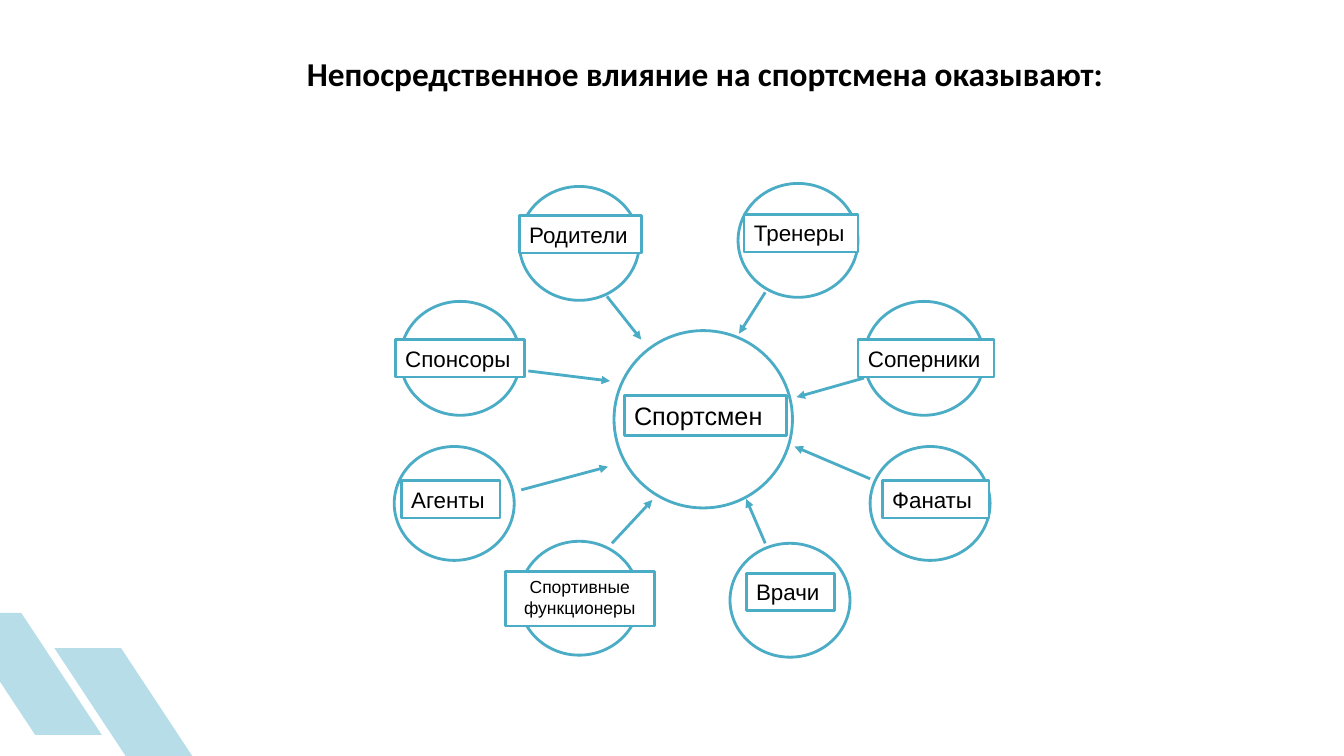
from pptx import Presentation
from pptx import util as u
from pptx.dml.color import RGBColor
from pptx.enum import shapes, text
from pptx.oxml.ns import qn
from lxml import etree
from dataclasses import dataclass


@dataclass(frozen=True)
class Theme:
    ink: str = "000000"
    paper: str = "FFFFFF"
    line: str = "4BACC6"
    deco: str = "B7DEE8"
    head: str = "Calibri"
    body: str = "Arial"
    title: float = 23.8
    hub: float = 18
    label: float = 16
    small: float = 12.5
    stroke: float = 2


T = Theme()
PX = 9144
SIZE = (1333, 750)
TITLE = "Непосредственное влияние на спортсмена оказывают:"
TITLE_BOX = (257, 52, 884, 73)
BARS = [(54, 643), (-45, 608)]
BAR = (146, 121)
SLANT = 0.66
HUB = ("Спортсмен", (609, 328, 177, 176), (619, 392, 161, 40))
RING = (119, 113)
ROW = 37
# name, ring corner, label left/top/width, arrow start and end
PEOPLE = [
    ("Родители", (515, 185), (515, 214, 121), (602, 294, 636, 337)),
    ("Тренеры", (732, 182), (738, 213, 113), (759, 290, 733, 331)),
    ("Спонсоры", (397, 299), (392, 337, 128), (524, 368, 605, 378)),
    ("Соперники", (857, 299), (851, 337, 135), (857, 375, 790, 394)),
    ("Агенты", (391, 443), (398, 477, 98), (517, 486, 603, 463)),
    ("Фанаты", (863, 443), (875, 477, 106), (863, 475, 788, 443)),
    ("Врачи", (724, 539), (740, 569, 88), (759, 539, 740, 495)),
]
STAFF = ("Спортивные функционеры", (515, 537), (501, 567, 148, 54),
         (607, 539, 647, 496))


def emu(nums):
    return [n * PX for n in nums]


def rgb(code):
    return RGBColor.from_string(code)


def add_form(page, kind, box, fill, edge=None):
    form = page.shapes.add_shape(kind, *emu(box))
    form.shadow.inherit = False
    form.fill.solid()
    form.fill.fore_color.rgb = rgb(fill)
    if edge:
        form.line.color.rgb = rgb(edge)
        form.line.width = u.Pt(T.stroke)
    else:
        form.line.fill.background()
    return form


def write(form, words, face, size, align, bold=False):
    frame = form.text_frame
    frame.word_wrap = True
    frame.vertical_anchor = text.MSO_ANCHOR.TOP
    para = frame.paragraphs[0]
    para.text = words
    para.alignment = align
    para.font.name = face
    para.font.size = u.Pt(size)
    para.font.bold = bold
    para.font.color.rgb = rgb(T.ink)
    return para


def add_label(page, words, box, size, align=text.PP_ALIGN.LEFT):
    form = add_form(page, shapes.MSO_SHAPE.RECTANGLE, box, T.paper, T.line)
    write(form, words, T.body, size, align)
    form.text_frame.auto_size = text.MSO_AUTO_SIZE.SHAPE_TO_FIT_TEXT


def add_arrow(page, ends):
    link = page.shapes.add_connector(shapes.MSO_CONNECTOR.STRAIGHT, *emu(ends))
    link.line.color.rgb = rgb(T.line)
    link.line.width = u.Pt(T.stroke)
    etree.SubElement(link.line._get_or_add_ln(), qn("a:tailEnd"), type="triangle")
    etree.SubElement(link._element.spPr, qn("a:effectLst"))


def add_bars(page):
    for spot in BARS:
        bar = add_form(page, shapes.MSO_SHAPE.PARALLELOGRAM, spot + BAR, T.deco)
        bar.adjustments[0] = SLANT
        bar._element.spPr.find(qn("a:xfrm")).set("flipH", "1")


def add_title(page):
    box = page.shapes.add_textbox(*emu(TITLE_BOX))
    para = write(box, TITLE, T.head, T.title, text.PP_ALIGN.CENTER, True)
    para.line_spacing = 0.9


def add_map(page):
    name, disc, plate = HUB
    rings = [disc] + [p[1] + RING for p in PEOPLE + [STAFF]]
    for ring in rings:
        add_form(page, shapes.MSO_SHAPE.OVAL, ring, T.paper, T.line)
    add_label(page, name, plate, T.hub)
    for words, _, spot, _ in PEOPLE:
        add_label(page, words, spot + (ROW,), T.label)
    add_label(page, STAFF[0], STAFF[2], T.small, text.PP_ALIGN.CENTER)
    for *_, ends in PEOPLE + [STAFF]:
        add_arrow(page, ends)


def main():
    deck = Presentation()
    deck.slide_width, deck.slide_height = emu(SIZE)
    page = deck.slides.add_slide(deck.slide_layouts[6])
    add_bars(page)
    add_title(page)
    add_map(page)
    deck.save("out.pptx")


if __name__ == "__main__":
    main()
